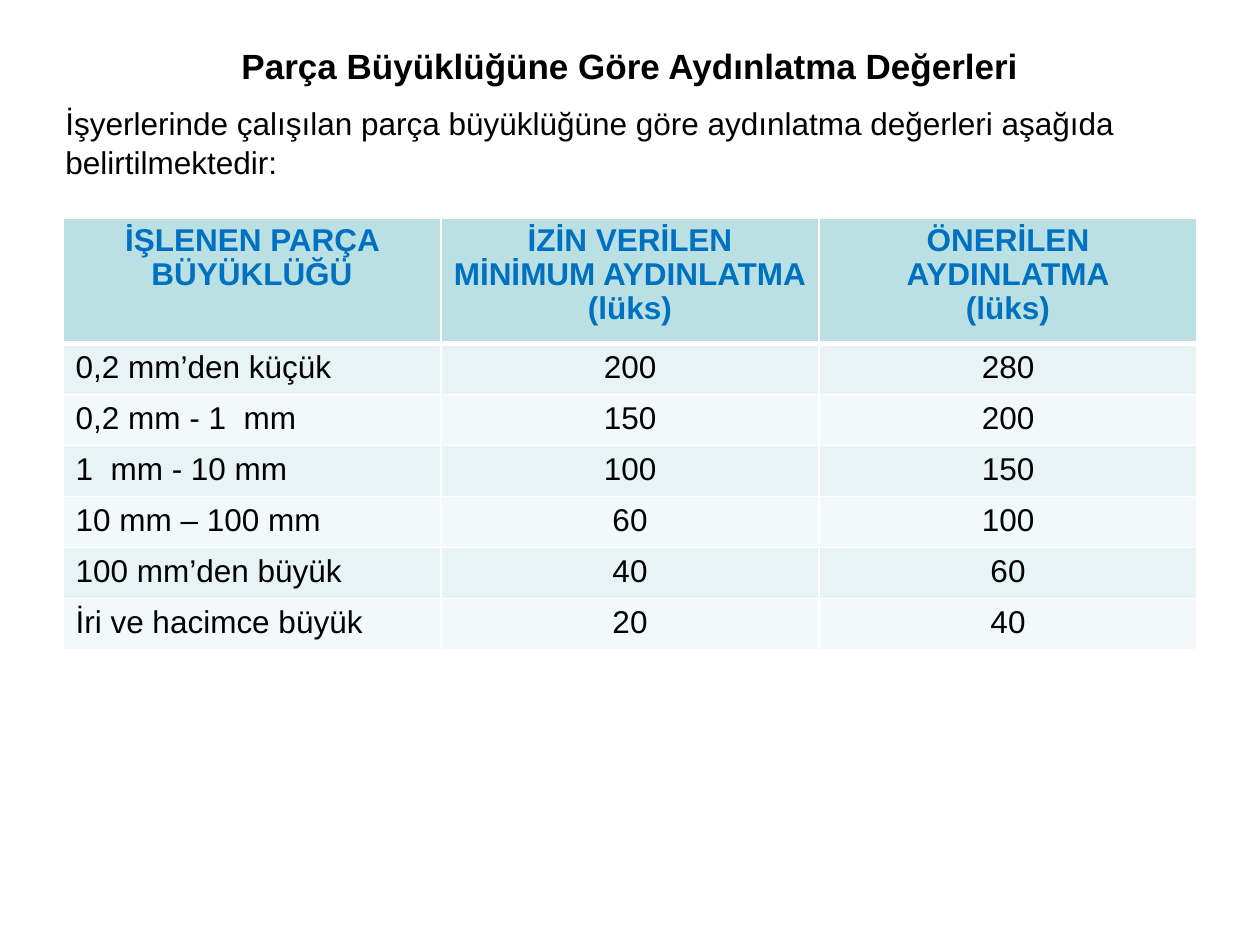
"""Build a slide with a table of recommended lighting levels by part size."""
from dataclasses import dataclass

from lxml.etree import SubElement
from pptx import Presentation
from pptx.dml.color import RGBColor as RGB
from pptx.enum.text import MSO_ANCHOR as Anchor, PP_ALIGN as Align
from pptx.oxml.ns import qn
from pptx.util import Cm, Pt


@dataclass(frozen=True)
class Theme:
    font: str = "Arial"
    title: int = 20
    body: int = 18
    ink: str = "000000"
    accent: str = "0070C0"
    header: str = "BBE0E3"
    bands: tuple = ("E7F3F4", "F3F9FA")
    border: str = "FFFFFF"


theme = Theme()


def write(tf, text, size, color, bold=False, align=Align.LEFT, spacing=None):
    tf.word_wrap = True
    tf.text = text
    for p in tf.paragraphs:
        p.alignment = align
        p.line_spacing = spacing
        p.font.name = theme.font
        p.font.size = Pt(size)
        p.font.bold = bold
        p.font.color.rgb = RGB.from_string(color)


def add_border(cell, side, width):
    ln = SubElement(cell._tc.get_or_add_tcPr(), qn(f"a:ln{side}"), w=str(Pt(width)))
    fill = SubElement(ln, qn("a:solidFill"))
    SubElement(fill, qn("a:srgbClr"), val=theme.border)


rows = [
    ("İŞLENEN PARÇA BÜYÜKLÜĞÜ", "İZİN VERİLEN MİNİMUM AYDINLATMA\n(lüks)",
     "ÖNERİLEN AYDINLATMA\n(lüks)"),
    ("0,2 mm’den küçük", "200", "280"),
    ("0,2 mm - 1  mm", "150", "200"),
    ("1  mm - 10 mm", "100", "150"),
    ("10 mm – 100 mm", "60", "100"),
    ("100 mm’den büyük", "40", "60"),
    ("İri ve hacimce büyük", "20", "40"),
]

prs = Presentation()
prs.slide_width, prs.slide_height = Cm(25.4), Cm(19.05)
s = prs.slides.add_slide(prs.slide_layouts[6])

title = s.shapes.add_textbox(Cm(1.27), Cm(0.76), Cm(22.86), Cm(1.14))
title.text_frame.vertical_anchor = Anchor.MIDDLE
write(title.text_frame, "Parça Büyüklüğüne Göre Aydınlatma Değerleri",
      theme.title, theme.ink, bold=True, align=Align.CENTER)

intro = s.shapes.add_textbox(Cm(1.07), Cm(1.93), Cm(23.06), Cm(2.57))
write(intro.text_frame,
      "İşyerlerinde çalışılan parça büyüklüğüne göre aydınlatma değerleri "
      "aşağıda belirtilmektedir:", theme.body, theme.ink, spacing=1.05)

table = s.shapes.add_table(len(rows), len(rows[0]), Cm(1.27), Cm(4.39),
                           Cm(22.86), Cm(8.71)).table
for i, values in enumerate(rows):
    is_header = i == 0
    table.rows[i].height = Cm(2.53 if is_header else 1.03)
    for j, value in enumerate(values):
        cell = table.cell(i, j)
        write(cell.text_frame, value, theme.body,
              theme.accent if is_header else theme.ink, bold=is_header,
              align=Align.CENTER if is_header or j else Align.LEFT,
              spacing=0.97 if is_header else None)
        for side in "LRTB":
            thick = (is_header and side == "B") or (i == 1 and side == "T")
            add_border(cell, side, 3 if thick else 1)
        cell.fill.solid()
        cell.fill.fore_color.rgb = RGB.from_string(
            theme.header if is_header else theme.bands[(i - 1) % 2])

prs.save("out.pptx")
